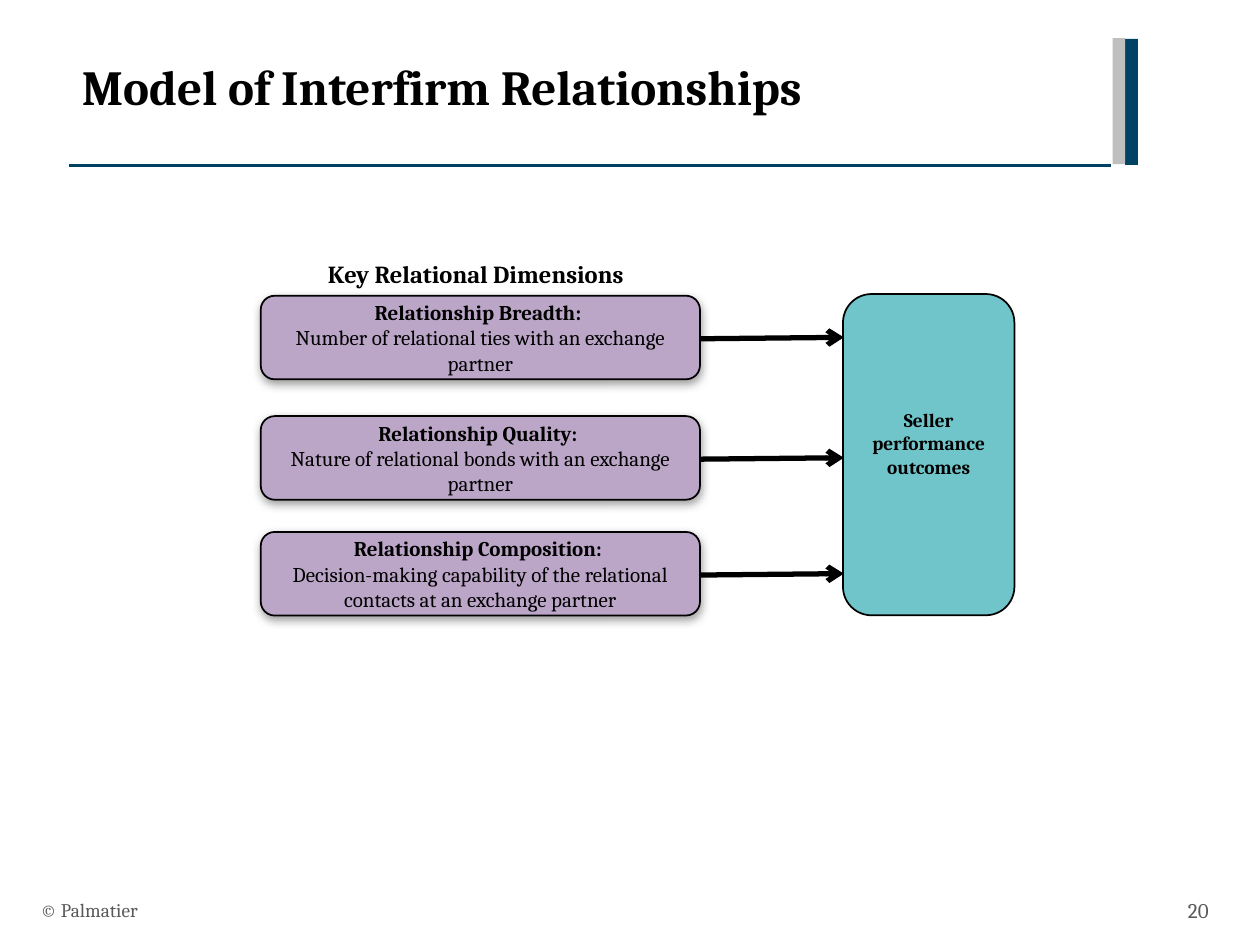
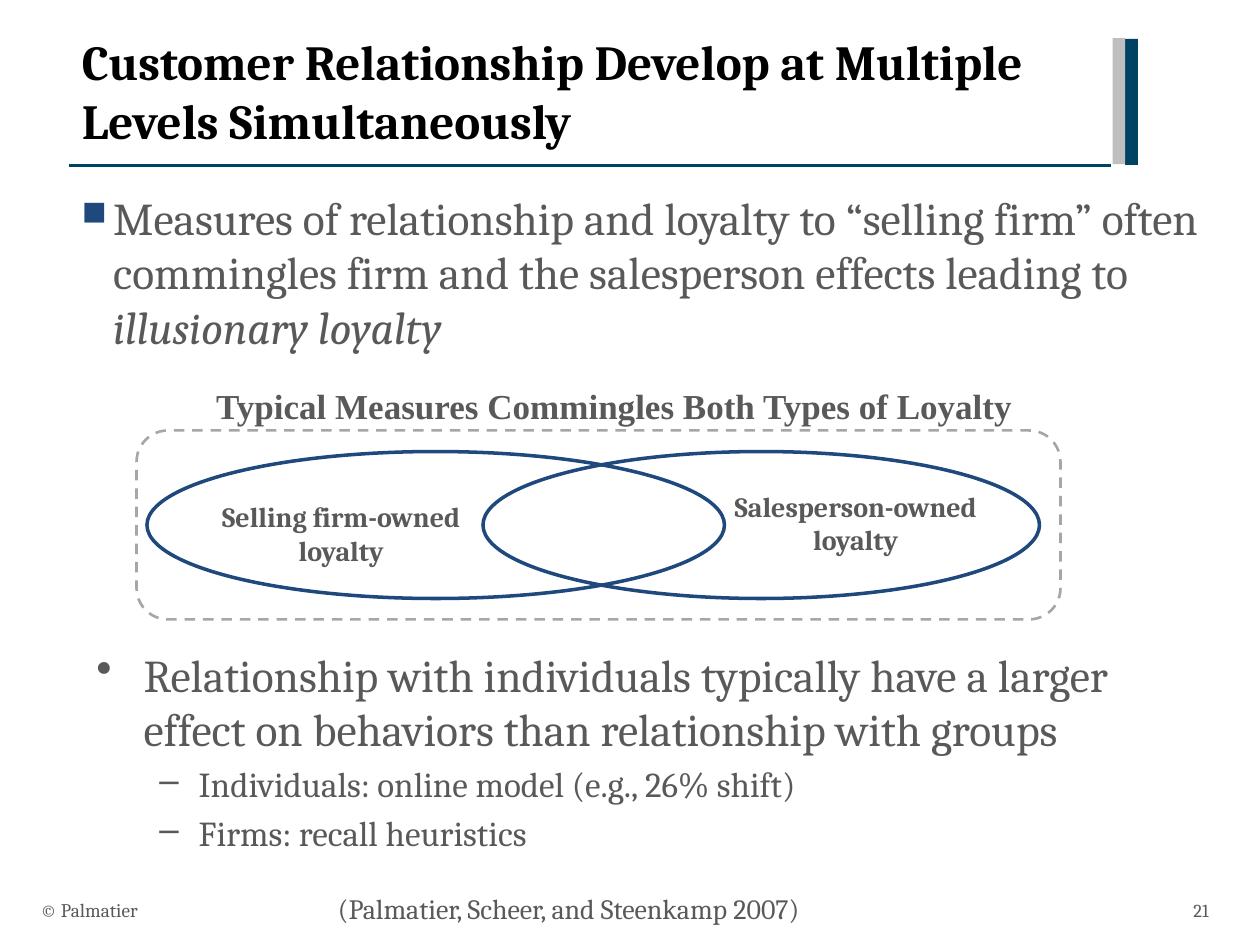
from lxml import etree
from pptx import Presentation
from pptx import util as u
from pptx.dml import color
from pptx.enum import dml, shapes, text
from pptx.oxml import ns

Pt = u.Pt
Kind = shapes.MSO_SHAPE
Mid = text.PP_ALIGN.CENTER
Left = text.PP_ALIGN.LEFT
Right = text.PP_ALIGN.RIGHT
Top = text.MSO_ANCHOR.TOP
Center = text.MSO_ANCHOR.MIDDLE


class Theme:
    font = "Cambria"
    serif = "Times New Roman"
    black = "000000"
    gray = "595959"
    navy = "004264"
    silver = "BFBFBF"
    teal = "70C5CA"
    mauve = "BCA6C8"
    blue = "1F497D"
    dash = "A6A6A6"
    title = 28
    body = 26
    sub = 20
    label = 16
    head = 14
    node = 12
    small = 11


def shape(slide, kind, area, fill=None, line=None, width=1):
    item = slide.shapes.add_shape(kind, *map(Pt, area))
    item.shadow.inherit = False
    if fill:
        item.fill.solid()
        item.fill.fore_color.rgb = color.RGBColor.from_string(fill)
    else:
        item.fill.background()
    if line:
        item.line.color.rgb = color.RGBColor.from_string(line)
        item.line.width = Pt(width)
    else:
        item.line.fill.background()
    return item


def write(item, paras, size, tint=Theme.gray, align=Left, anchor=Top,
          font=Theme.font, inset=(7.2, 3.6, 7.2, 3.6)):
    frame = item.text_frame
    frame.word_wrap = True
    frame.auto_size = text.MSO_AUTO_SIZE.NONE
    frame.vertical_anchor = anchor
    (frame.margin_left, frame.margin_top,
     frame.margin_right, frame.margin_bottom) = map(Pt, inset)
    for i, runs in enumerate(paras):
        para = frame.add_paragraph() if i else frame.paragraphs[0]
        para.alignment = align
        for words, style in runs:
            run = para.add_run()
            run.text = words
            run.font.name = font
            run.font.size = Pt(size)
            run.font.bold = "b" in style
            run.font.italic = "i" in style
            run.font.color.rgb = color.RGBColor.from_string(tint)
    return frame


deck = Presentation()
deck.slide_width, deck.slide_height = Pt(720), Pt(540)

heads = [
    ("Model of Interfirm Relationships", 28.8, "20", 12),
    ("Customer Relationship Develop at Multiple Levels Simultaneously",
     14.4, "21", 10.5),
]
pages = []
for words, top, num, size in heads:
    page = deck.slides.add_slide(deck.slide_layouts[5])
    pages.append(page)
    rule = page.shapes.add_connector(
        shapes.MSO_CONNECTOR.STRAIGHT, Pt(39.6), Pt(94.5), Pt(635), Pt(94.5))
    rule.line.color.rgb = color.RGBColor.from_string(Theme.navy)
    rule.line.width = Pt(2)
    etree.SubElement(rule._element.spPr, ns.qn("a:effectLst"))
    shape(page, Kind.RECTANGLE, (643, 22.3, 7.2, 72), Theme.navy)
    shape(page, Kind.RECTANGLE, (635.8, 21.8, 7.2, 72), Theme.silver)
    title = page.shapes.title
    title.left, title.top, title.width, title.height = map(
        Pt, (39.6, top, 594.7, 63.4))
    write(title, [[(words, "b")]], Theme.title, Theme.black)
    foot = page.shapes.add_textbox(Pt(16), Pt(505.5), Pt(180), Pt(28.8))
    write(foot, [[("© Palmatier", "")]], Theme.small, anchor=Center)
    mark = page.shapes.add_textbox(Pt(653.8), Pt(505.5), Pt(44), Pt(28.8))
    write(mark, [[(num, "")]], size, align=Right, anchor=Center)

model, levels = pages

goal = shape(model, Kind.ROUNDED_RECTANGLE, (481.7, 168, 98, 183.6),
             Theme.teal, Theme.black)
write(goal, [[("Seller performance outcomes", "b")]], Theme.small,
      Theme.black, Mid, Center, inset=(6.5, 3, 6.5, 16))

nodes = [
    (169, "Breadth", "Number of relational ties with an exchange partner"),
    (237.8, "Quality", "Nature of relational bonds with an exchange partner"),
    (304, "Composition", "Decision-making capability of the relational "
     "contacts at an exchange partner"),
]
for top, name, note in nodes:
    node = shape(model, Kind.ROUNDED_RECTANGLE, (149, top, 251, 47.8),
                 Theme.mauve, Theme.black)
    glow = etree.SubElement(
        node._element.spPr.find(ns.qn("a:effectLst")), ns.qn("a:outerShdw"),
        blurRad=str(Pt(5)), dist=str(Pt(2)), dir="5400000", rotWithShape="0")
    tone = etree.SubElement(glow, ns.qn("a:srgbClr"), val="808080")
    etree.SubElement(tone, ns.qn("a:alpha"), val="75000")
    write(node, [[(f"Relationship {name}: ", "b")], [(note, "")]],
          Theme.node, Theme.black, Mid, Center)
    arrow = model.shapes.add_connector(
        shapes.MSO_CONNECTOR.STRAIGHT,
        Pt(400.3), Pt(top + 24.6), Pt(482.2), Pt(top + 23.8))
    arrow.line.color.rgb = color.RGBColor.from_string(Theme.black)
    arrow.line.width = Pt(3)
    etree.SubElement(arrow.line._get_or_add_ln(), ns.qn("a:tailEnd"),
                     type="arrow")
    etree.SubElement(arrow._element.spPr, ns.qn("a:effectLst"))

head = model.shapes.add_textbox(Pt(149), Pt(144.7), Pt(246), Pt(24))
write(head, [[("Key Relational Dimensions", "b")]], Theme.head,
      Theme.black, Mid, inset=(6.5, 3, 6.5, 3))

for left, width in [(84, 330), (276, 318)]:
    shape(levels, Kind.OVAL, (left, 258, width, 84), line=Theme.blue, width=2)
frame = shape(levels, Kind.ROUNDED_RECTANGLE, (78, 246, 528, 108),
              line=Theme.dash, width=1.5)
frame.line.dash_style = dml.MSO_LINE.DASH

labels = [
    ((402, 276, 174, 46), "Salesperson-owned loyalty", "b",
     Theme.label, Theme.font, Mid),
    ((108, 282, 174, 46), "Selling firm-owned loyalty", "b",
     Theme.label, Theme.font, Mid),
    ((96, 216, 510, 32), "Typical Measures Commingles Both Types of Loyalty",
     "b", Theme.sub, Theme.serif, Mid),
    ((186, 506, 311, 27), "(Palmatier, Scheer, and Steenkamp 2007)", "",
     Theme.label, Theme.font, Left),
]
for area, words, style, size, font, align in labels:
    label = levels.shapes.add_textbox(*map(Pt, area))
    write(label, [[(words, style)]], size, align=align, font=font)

lead = levels.shapes.add_textbox(Pt(39.6), Pt(105), Pt(658), Pt(104))
lead = write(lead, [[
    ("Measures of relationship and loyalty to “selling firm” often "
     "commingles firm and the salesperson effects leading to ", ""),
    ("illusionary loyalty", "i")]], Theme.body)
facts = levels.shapes.add_textbox(Pt(48), Pt(366), Pt(654), Pt(126))
facts = write(facts, [
    [("Relationship with individuals typically have a larger effect on "
      "behaviors than relationship with groups", "")],
    [("Individuals: online model (e.g., 26% shift)", "")],
    [("Firms: recall heuristics", "")]], Theme.body)

main, *subs = facts.paragraphs
marks = [(lead.paragraphs[0], "■", 18, 18), (main, "•", 27, 27)]
marks += [(sub, "–", 58.5, 22.5) for sub in subs]
for para, sign, left, hang in marks:
    prop = para._p.get_or_add_pPr()
    prop.set("marL", str(Pt(left)))
    prop.set("indent", str(-Pt(hang)))
    if sign == "■":
        tone = etree.SubElement(prop, ns.qn("a:buClr"))
        etree.SubElement(tone, ns.qn("a:srgbClr"), val=Theme.blue)
        etree.SubElement(prop, ns.qn("a:buSzPct"), val="75000")
    etree.SubElement(prop, ns.qn("a:buChar"), char=sign)
for sub in subs:
    sub.level = 1
    sub.space_before = Pt(4)
    sub.runs[0].font.size = Pt(Theme.sub)

deck.save("out.pptx")
